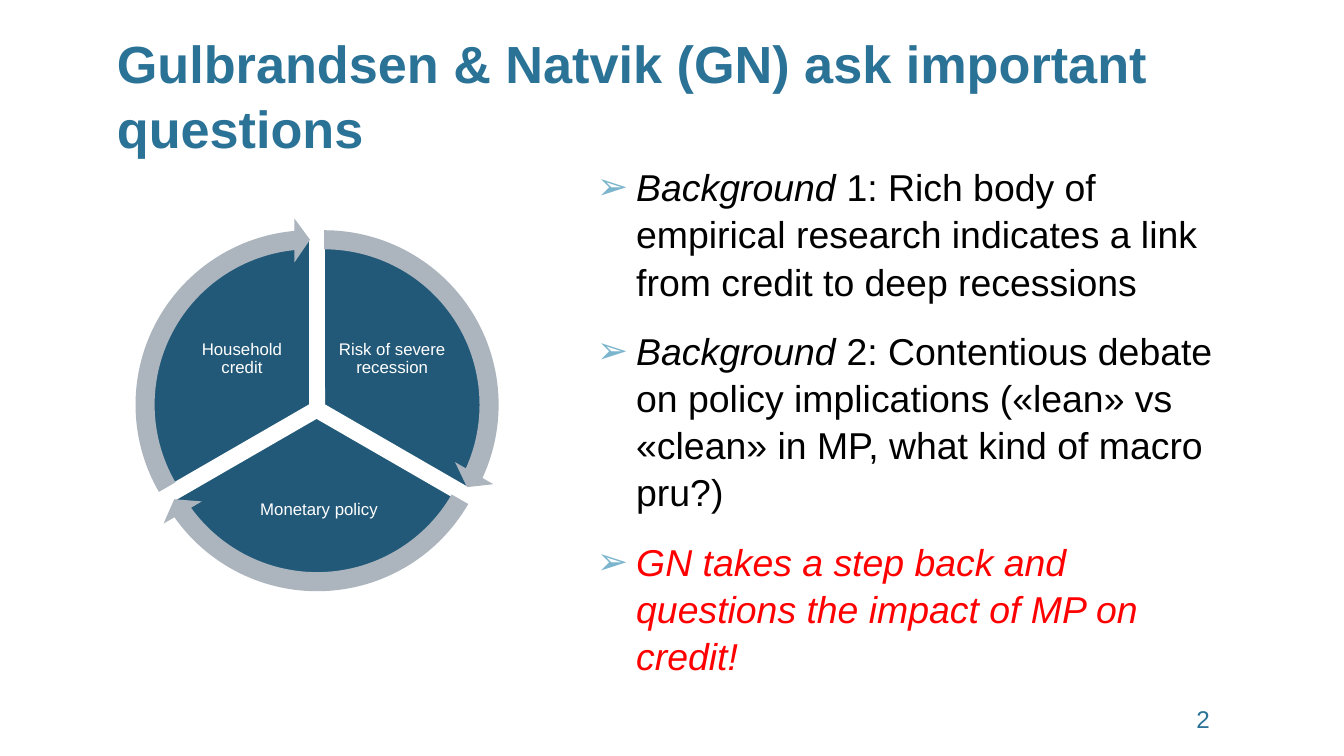
from lxml import etree
from pptx import Presentation
from pptx import util as u
from pptx.dml.color import RGBColor
from pptx.enum import shapes, text
from pptx.oxml import ns

PX = 9144
TEAL, NAVY, GREY, WHITE = "2B7297", "225978", "ACB5BE", "FFFFFF"
BLACK, RED, SKY = "000000", "FF0000", "7AB4CD"
LEFT, MID, RIGHT = text.PP_ALIGN.LEFT, text.PP_ALIGN.CENTER, text.PP_ALIGN.RIGHT
TOP, CORE, LOW = text.MSO_ANCHOR.TOP, text.MSO_ANCHOR.MIDDLE, text.MSO_ANCHOR.BOTTOM

SECTORS = [
    (-90, (156, 237), (136, 216), "Risk of severe recession", (330, 307, 118, 98)),
    (30, (149, 249), (129, 228), "Monetary policy", (228, 463, 177, 86)),
    (150, (143, 237), (122, 216), "Household credit", (181, 307, 118, 98)),
]
POINTS = [
    [("Background", BLACK, True),
     (" 1: Rich body of empirical research indicates a link from credit to deep recessions", BLACK, False)],
    [("Background", BLACK, True),
     (" 2: Contentious debate on policy implications («lean» vs «clean» in MP, what kind of macro pru?)", BLACK, False)],
    [("GN takes a step back and questions the impact of MP on credit!", RED, True)],
]


def rgb(code):
    return RGBColor.from_string(code)


def apply(item, values):
    for key, value in values.items():
        setattr(item, key, value)


def add_run(para, words, size, color, **more):
    run = para.add_run()
    run.text = words
    apply(run.font, {"name": "Arial", "size": u.Pt(size), **more})
    run.font.color.rgb = rgb(color)


def add_box(slide, area, anchor=TOP, inset=0):
    frame = slide.shapes.add_textbox(*(n * PX for n in area)).text_frame
    sides = ("left", "top", "right", "bottom")
    apply(frame, {"word_wrap": True, "vertical_anchor": anchor,
                  **{f"margin_{side}": inset * PX for side in sides}})
    return frame


def add_label(slide, area, words, size, color, align=LEFT, anchor=TOP,
              inset=0, space=1.0, **more):
    para = add_box(slide, area, anchor, inset).paragraphs[0]
    apply(para, {"alignment": align, "line_spacing": space})
    add_run(para, words, size, color, **more)


def add_bullet(para):
    props = para._p.get_or_add_pPr()
    apply_indent = {"marL": 39 * PX, "indent": -39 * PX}
    for key, value in apply_indent.items():
        props.set(key, str(value))
    tint = etree.SubElement(props, ns.qn("a:buClr"))
    etree.SubElement(tint, ns.qn("a:srgbClr")).set("val", SKY)
    etree.SubElement(props, ns.qn("a:buFont")).set("typeface", "Arial")
    etree.SubElement(props, ns.qn("a:buChar")).set("char", "➢")


def add_points(slide, area, points):
    frame = add_box(slide, area)
    for i, parts in enumerate(points):
        para = frame.add_paragraph() if i else frame.paragraphs[0]
        add_bullet(para)
        apply(para, {"line_spacing": 1.05, "space_before": u.Pt(16 if i else 0)})
        for words, color, slant in parts:
            add_run(para, words, 26.7, color, italic=slant)


def add_shape(slide, kind, spot, size, color, adjust, edge=None):
    left, top = spot
    shape = slide.shapes.add_shape(kind, left * PX, top * PX, size * PX, size * PX)
    shape.shadow.inherit = False
    shape.fill.solid()
    shape.fill.fore_color.rgb = rgb(color)
    for i, value in enumerate(adjust):
        shape.adjustments[i] = value
    if edge:
        shape.line.color.rgb = rgb(edge)
        shape.line.width = u.Pt(2)
    else:
        shape.line.fill.background()


def angle(degrees):
    return degrees % 360 * 0.6


def add_cycle(slide):
    kind = shapes.MSO_SHAPE
    for start, spot, _, words, area in SECTORS:
        add_shape(slide, kind.PIE, spot, 330, NAVY,
                  [angle(start), angle(start + 120)], WHITE)
        add_label(slide, area, words, 12, WHITE, MID, CORE, inset=2, space=0.9)
    for start, _, spot, _, _ in SECTORS:
        head = 5.46
        add_shape(slide, kind.CIRCULAR_ARROW, spot, 371, GREY,
                  [0.051, angle(head), angle(start + 120 - head), angle(start), 0.059])


def main():
    deck = Presentation()
    apply(deck, {"slide_width": 1333 * PX, "slide_height": 750 * PX})
    slide = deck.slides.add_slide(deck.slide_layouts[6])
    add_label(slide, (116, 88, 1090, 70), "Gulbrandsen & Natvik (GN) ask important questions",
              37.3, TEAL, anchor=LOW, space=1.05, bold=True)
    add_label(slide, (1043, 699, 157, 29), "2", 17.3, TEAL, RIGHT)
    add_points(slide, (592, 161, 614, 509), POINTS)
    add_cycle(slide)
    deck.save("out.pptx")


if __name__ == "__main__":
    main()
